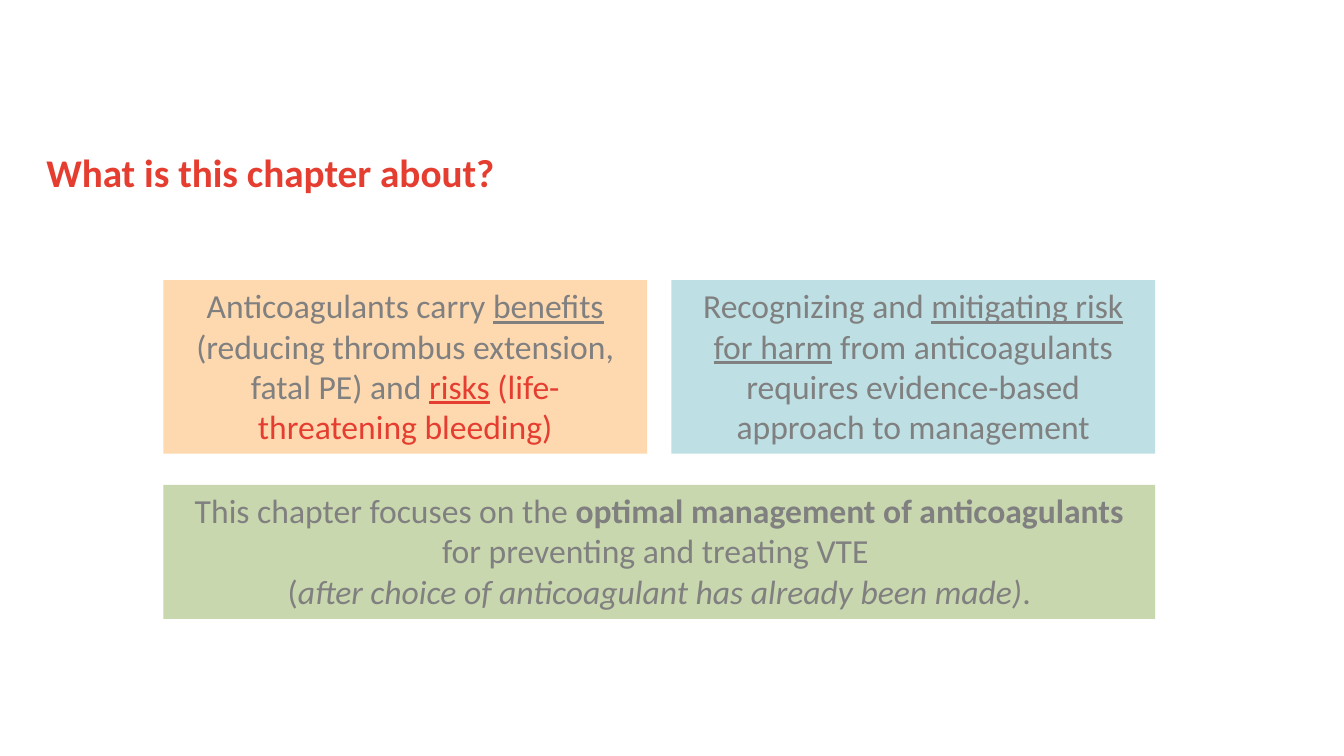
"""Build a slide that says what the chapter on anticoagulants covers."""
from dataclasses import dataclass

from pptx import Presentation
from pptx import util as u
from pptx.dml.color import RGBColor
from pptx.enum import shapes, text

WIDTH, HEIGHT = u.Inches(13.33), u.Inches(7.5)
GREY, RED = "808080", "E53E31"
LEFT, HALF, GAP = 12.15, 36, 1.8
UPPER, LOWER = 37.07, 64.13


@dataclass
class Span:
    words: str
    color: str = GREY
    bold: bool = False
    italic: bool = False
    underline: bool = False


@dataclass
class Panel:
    left: float
    top: float
    width: float
    height: float
    fill: str
    lines: list[list[Span]]


PANELS = [
    Panel(LEFT, UPPER, HALF, 22.93, "FED9B0", [[
        Span("Anticoagulants carry "),
        Span("benefits", underline=True),
        Span(" (reducing thrombus extension, fatal PE) and "),
        Span("risks", RED, underline=True),
        Span(" (life-threatening bleeding)", RED),
    ]]),
    Panel(LEFT, LOWER, 2 * HALF + GAP, 17.73, "C9D7AF", [
        [
            Span("This chapter focuses on the "),
            Span("optimal management of anticoagulants", bold=True),
            Span(" for preventing and treating VTE "),
        ],
        [
            Span("("),
            Span("after choice of anticoagulant has already been made)", italic=True),
            Span("."),
        ],
    ]),
    Panel(LEFT + HALF + GAP, UPPER, HALF, 22.93, "BEE0E4", [[
        Span("Recognizing and "),
        Span("mitigating risk for harm", underline=True),
        Span(" ", bold=True),
        Span("from anticoagulants requires evidence-based approach to management"),
    ]]),
]


def rgb(value: str) -> RGBColor:
    """Turn a hex string into a colour."""
    return RGBColor.from_string(value)


def place(left: float, top: float, width: float, height: float) -> list[int]:
    """Turn percentages of the slide's size into lengths."""
    shares = (left, WIDTH), (top, HEIGHT), (width, WIDTH), (height, HEIGHT)
    return [round(share * side / 100) for share, side in shares]


def add_text(para, words: str, *, size: float, color: str, bold: bool = False,
             italic: bool = False, underline: bool = False) -> None:
    """Append formatted words to a paragraph."""
    span = para.add_run()
    span.text = words
    font = span.font
    font.name, font.size = "Calibri", u.Pt(size)
    font.bold, font.italic, font.underline = bold, italic, underline
    font.color.rgb = rgb(color)


def draw_title(page, words: str) -> None:
    """Draw the slide's heading."""
    box = page.shapes.add_textbox(*place(3.45, 19.6, 90, 10.4))
    frame = box.text_frame
    frame.word_wrap = True
    frame.margin_left = frame.margin_right = 0
    frame.margin_top = frame.margin_bottom = 0
    add_text(frame.paragraphs[0], words, size=28, color=RED, bold=True)


def draw_panel(page, panel: Panel) -> None:
    """Draw a coloured rectangle with its centred text."""
    box = page.shapes.add_shape(
        shapes.MSO_SHAPE.RECTANGLE,
        *place(panel.left, panel.top, panel.width, panel.height))
    box.shadow.inherit = False
    box.fill.solid()
    box.fill.fore_color.rgb = rgb(panel.fill)
    box.line.fill.background()
    frame = box.text_frame
    frame.word_wrap = True
    frame.auto_size = text.MSO_AUTO_SIZE.SHAPE_TO_FIT_TEXT
    frame.vertical_anchor = text.MSO_ANCHOR.TOP
    for index, line in enumerate(panel.lines):
        para = frame.add_paragraph() if index else frame.paragraphs[0]
        para.alignment = text.PP_ALIGN.CENTER
        for span in line:
            add_text(para, span.words, size=24, color=span.color, bold=span.bold,
                     italic=span.italic, underline=span.underline)


def main() -> None:
    """Build and save the deck."""
    deck = Presentation()
    deck.slide_width, deck.slide_height = WIDTH, HEIGHT
    page = deck.slides.add_slide(deck.slide_layouts[6])
    for panel in PANELS:
        draw_panel(page, panel)
    draw_title(page, "What is this chapter about?")
    deck.save("out.pptx")


if __name__ == "__main__":
    main()
